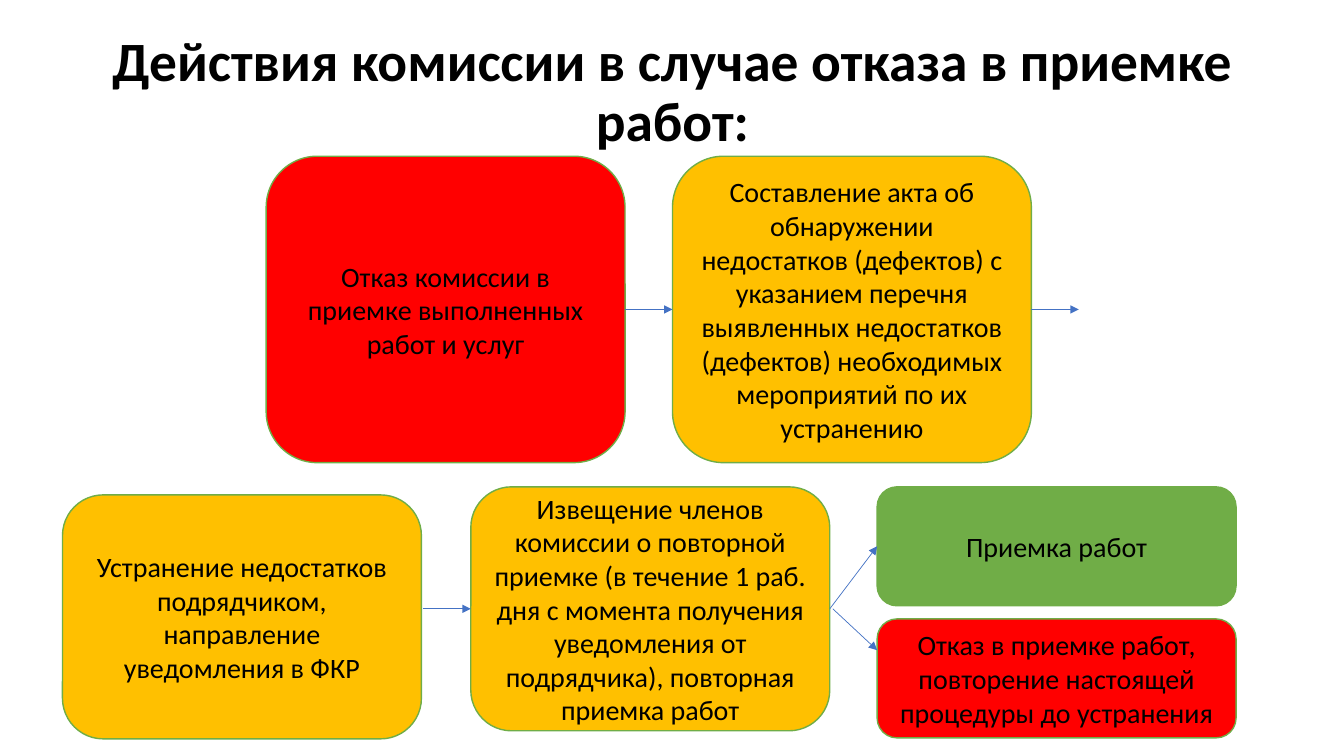
from lxml import etree
from pptx import Presentation
from pptx.dml.color import RGBColor
from pptx.enum.shapes import MSO_CONNECTOR as LINE, MSO_SHAPE as SHAPE
from pptx.enum.text import MSO_ANCHOR as ANCHOR, PP_ALIGN as ALIGN
from pptx.oxml.ns import qn
from pptx.util import Inches, Pt

BLACK = RGBColor(0x00, 0x00, 0x00)
RED = RGBColor(0xFF, 0x00, 0x00)
AMBER = RGBColor(0xFF, 0xC0, 0x00)
GREEN = RGBColor(0x70, 0xAD, 0x47)
BLUE = RGBColor(0x44, 0x72, 0xC4)

FONT = "Calibri"
WIDE = 3.56
GAP = 0.47
LEFT, RIGHT = 1, 3


def write(shape, text, size, bold=False):
    """Fill a shape with one centred paragraph and return it."""
    frame = shape.text_frame
    frame.word_wrap = True
    frame.vertical_anchor = ANCHOR.MIDDLE
    para = frame.paragraphs[0]
    para.alignment = ALIGN.CENTER
    run = para.add_run()
    run.text = text
    run.font.name = FONT
    run.font.size = Pt(size)
    run.font.bold = bold
    run.font.color.rgb = BLACK
    return para


def add_title(slide, x, y, w, h):
    box = slide.shapes.add_textbox(Inches(x), Inches(y), Inches(w), Inches(h))
    para = write(box, "Действия комиссии в случае отказа в приемке работ:", 39.6, True)
    para.line_spacing = 0.9


def add_step(slide, x, y, h, fill, text):
    step = slide.shapes.add_shape(
        SHAPE.ROUNDED_RECTANGLE, Inches(x), Inches(y), Inches(WIDE), Inches(h))
    step.shadow.inherit = False
    step.fill.solid()
    step.fill.fore_color.rgb = fill
    step.line.color.rgb = GREEN
    step.line.width = Pt(1)
    write(step, text, 20)
    return step


def add_arrow(slide, start, end, source=None, target=None):
    """Draw an arrow, joined to the right of source and the left of target."""
    arrow = slide.shapes.add_connector(
        LINE.STRAIGHT, *(Inches(v) for v in (*start, *end)))
    if source is not None:
        arrow.begin_connect(source, RIGHT)
    if target is not None:
        arrow.end_connect(target, LEFT)
    arrow.line.color.rgb = BLUE
    arrow.line.width = Pt(0.5)
    etree.SubElement(arrow.line._get_or_add_ln(), qn("a:tailEnd"), type="triangle")
    etree.SubElement(arrow._element.spPr, qn("a:effectLst"))


def add_refusal(slide, x, y, h):
    """Top row: refusal, then the defect report."""
    mid = y + h / 2
    next_x = x + WIDE + GAP
    end = next_x + WIDE
    refusal = add_step(slide, x, y, h, RED,
                       "Отказ комиссии в приемке выполненных работ и услуг")
    report = add_step(
        slide, next_x, y, h, AMBER,
        "Составление акта об обнаружении недостатков (дефектов) с указанием "
        "перечня выявленных недостатков (дефектов) необходимых мероприятий "
        "по их устранению")
    add_arrow(slide, (x + WIDE, mid), (next_x, mid), refusal, report)
    add_arrow(slide, (end, mid), (end + GAP, mid), report)


def add_repeat(slide, x, y, h):
    """Bottom row: repair, notice and the two outcomes."""
    notice_x = x + WIDE + GAP + 0.02
    out_x = notice_x + WIDE + GAP
    mid = y + h / 2
    out_h = 1.18
    add_step(slide, x, y + 0.08, h, AMBER,
             "Устранение недостатков подрядчиком, направление уведомления в ФКР")
    notice = add_step(
        slide, notice_x, y, h, AMBER,
        "Извещение членов комиссии о повторной приемке (в течение 1 раб. дня "
        "с момента получения уведомления от подрядчика), повторная приемка работ")
    accept = add_step(slide, out_x, y, out_h, GREEN, "Приемка работ")
    add_step(slide, out_x, y + out_h + 0.13, out_h, RED,
             "Отказ в приемке работ, повторение настоящей процедуры до устранения")
    add_arrow(slide, (notice_x - GAP, mid), (notice_x, mid), target=notice)
    add_arrow(slide, (out_x - GAP, mid), (out_x, y + out_h / 2), notice, accept)
    add_arrow(slide, (out_x - GAP + 0.03, mid), (out_x, mid + 0.41))


def main():
    deck = Presentation()
    deck.slide_width = Inches(13.33)
    deck.slide_height = Inches(7.5)
    slide = deck.slides.add_slide(deck.slide_layouts[6])
    add_title(slide, 0.92, 0.4, 11.5, 1.05)
    add_refusal(slide, 2.64, 1.55, 3.04)
    add_repeat(slide, 0.62, 4.83, 2.42)
    deck.save("out.pptx")


if __name__ == "__main__":
    main()
